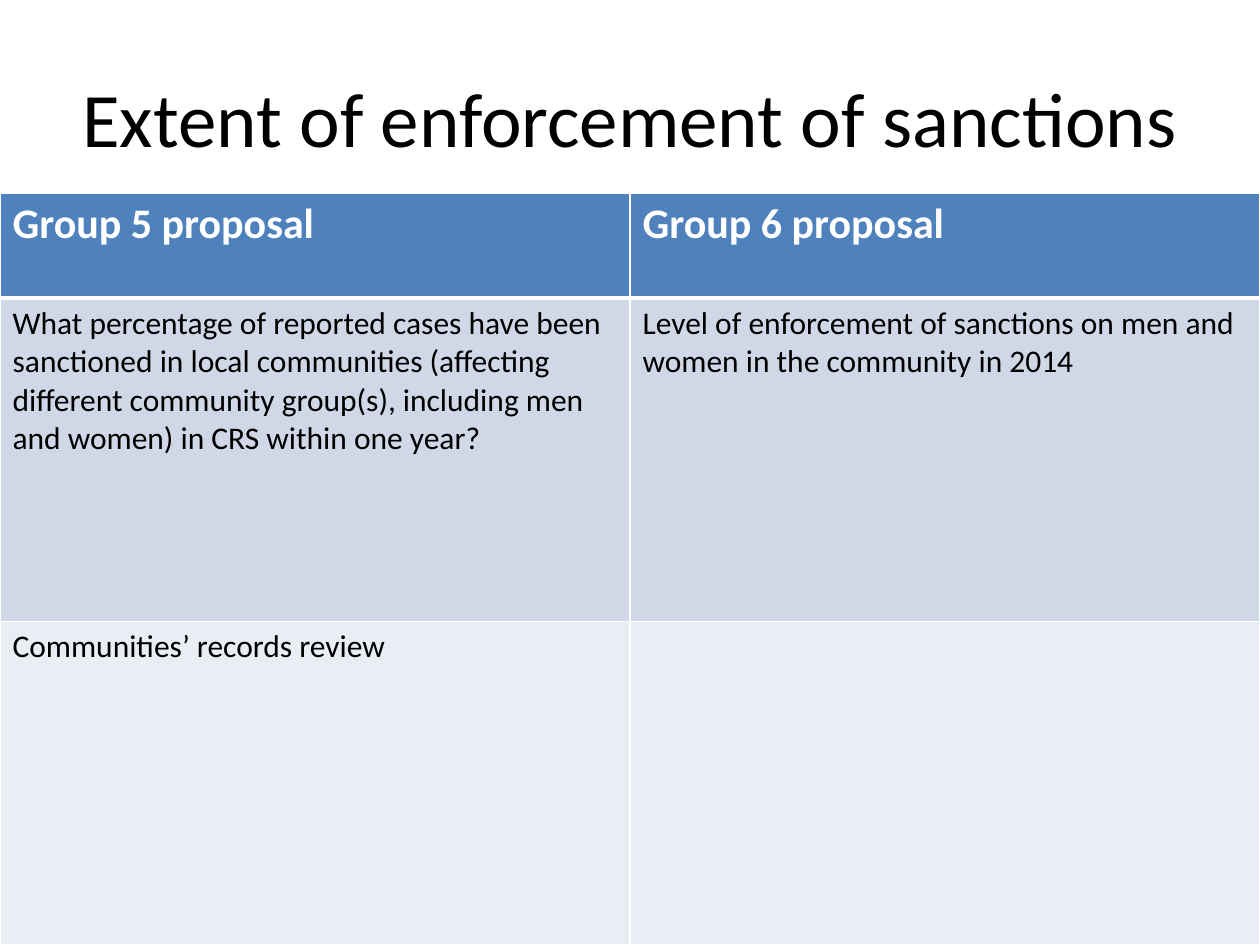
from dataclasses import dataclass

from lxml.etree import SubElement
from pptx import Presentation
from pptx.dml.color import RGBColor
from pptx.enum.text import MSO_ANCHOR, PP_ALIGN
from pptx.oxml.ns import qn
from pptx.util import Inches, Pt


@dataclass(frozen=True)
class Theme:
    """Colours, font and type sizes of the deck."""
    font: str = "Calibri"
    ink: str = "000000"
    white: str = "FFFFFF"
    header_fill: str = "4F81BD"
    band_fills: tuple = ("D0D8E8", "E9EDF4")
    title_size: int = 44
    header_size: int = 24
    body_size: int = 18
    rule: int = 1
    header_rule: int = 3


THEME = Theme()
WIDTH, HEIGHT = Inches(10), Inches(7.5)
TITLE = "Extent of enforcement of sanctions"
PROPOSALS = [
    ["Group 5 proposal", "Group 6 proposal"],
    ["What percentage of reported cases have been sanctioned in local communities "
     "(affecting different community group(s), including men and women) in CRS "
     "within one year?",
     "Level of enforcement of sanctions on men and women in the community in 2014"],
    ["Communities’ records review", ""],
]
ROW_SHARES = [0.14, 0.43, 0.43]


def add_span(para, text, size, color, bold=False):
    """Add one formatted run to a paragraph."""
    span = para.add_run()
    span.text = text
    span.font.name = THEME.font
    span.font.size = Pt(size)
    span.font.bold = bold
    span.font.color.rgb = RGBColor.from_string(color)


def add_title(page, left, top, width, height):
    """Place the centred title in the given box."""
    box = page.shapes.add_textbox(left, top, width, height)
    frame = box.text_frame
    frame.word_wrap = True
    frame.vertical_anchor = MSO_ANCHOR.MIDDLE
    para = frame.paragraphs[0]
    para.alignment = PP_ALIGN.CENTER
    add_span(para, TITLE, THEME.title_size, THEME.ink)


def set_borders(cell, top, bottom):
    """Draw white cell borders, with top and bottom weights in points."""
    properties = cell._tc.get_or_add_tcPr()
    weights = {"a:lnL": THEME.rule, "a:lnR": THEME.rule, "a:lnT": top, "a:lnB": bottom}
    for edge, weight in weights.items():
        line = SubElement(properties, qn(edge), w=str(Pt(weight)))
        fill = SubElement(line, qn("a:solidFill"))
        SubElement(fill, qn("a:srgbClr"), val=THEME.white)


def fill_cell(cell, text, row):
    """Style a cell for its row and write its text."""
    header = row == 0
    set_borders(cell,
                top=THEME.header_rule if row == 1 else THEME.rule,
                bottom=THEME.header_rule if header else THEME.rule)
    cell.fill.solid()
    color = THEME.header_fill if header else THEME.band_fills[(row - 1) % 2]
    cell.fill.fore_color.rgb = RGBColor.from_string(color)
    para = cell.text_frame.paragraphs[0]
    if header:
        add_span(para, text, THEME.header_size, THEME.white, bold=True)
    elif text:
        add_span(para, text, THEME.body_size, THEME.ink)


def add_proposals(page, left, top, width, height):
    """Place the table of group proposals in the given box."""
    columns = len(PROPOSALS[0])
    table = page.shapes.add_table(len(PROPOSALS), columns, left, top, width, height).table
    for column in table.columns:
        column.width = width // columns
    for row, (texts, share) in enumerate(zip(PROPOSALS, ROW_SHARES)):
        table.rows[row].height = int(height * share)
        for column, text in enumerate(texts):
            fill_cell(table.cell(row, column), text, row)


def main():
    """Build and save the deck."""
    deck = Presentation()
    deck.slide_width, deck.slide_height = WIDTH, HEIGHT
    page = deck.slides.add_slide(deck.slide_layouts[6])
    margin = int(WIDTH * 0.05)
    add_title(page, margin, int(HEIGHT * 0.04), WIDTH - 2 * margin, Inches(1.25))
    table_top = Inches(1.53)
    add_proposals(page, 0, table_top, WIDTH, HEIGHT - table_top)
    deck.save("out.pptx")


if __name__ == "__main__":
    main()
